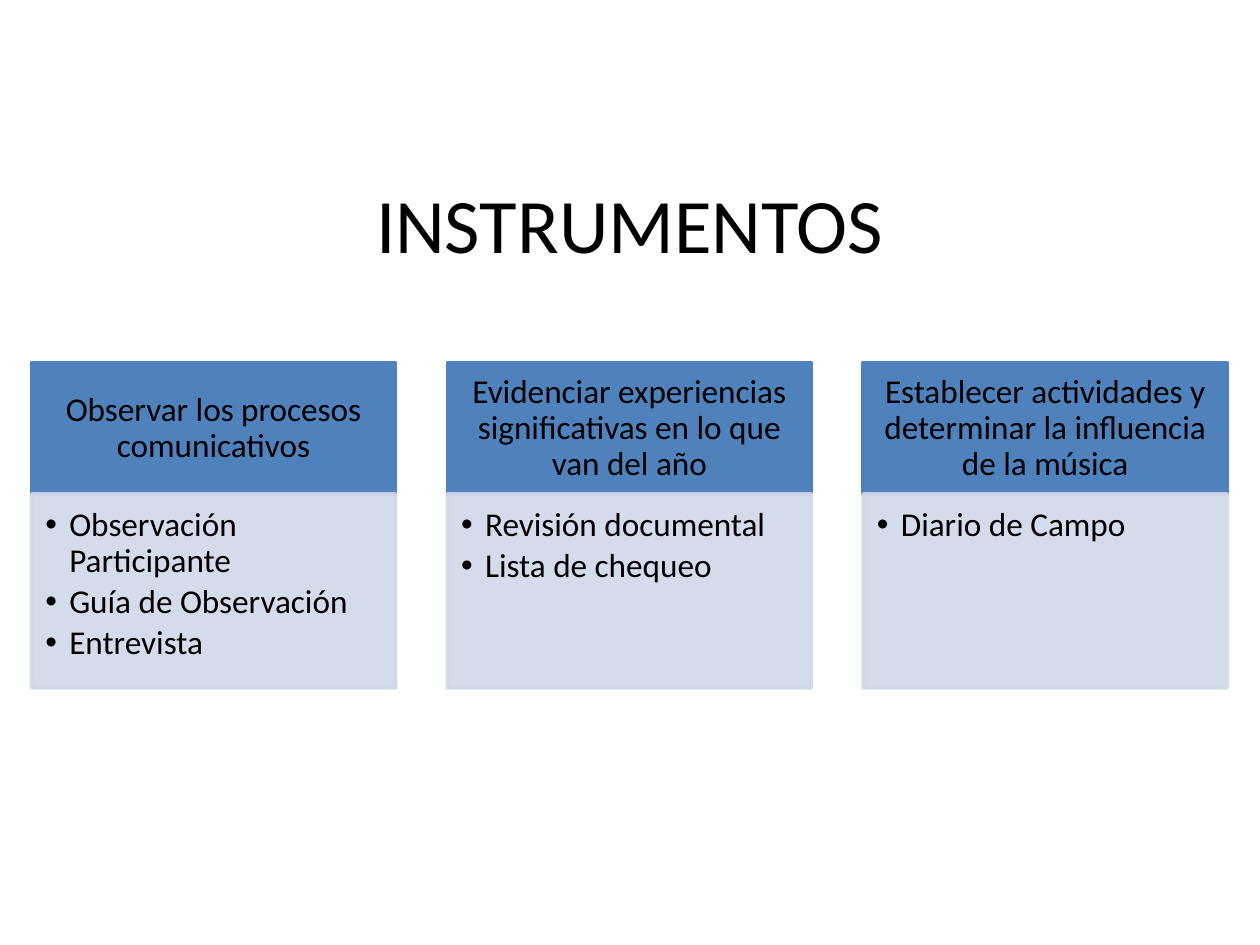
from lxml.etree import SubElement
from pptx import Presentation
from pptx.dml.color import RGBColor
from pptx.enum.shapes import MSO_SHAPE
from pptx.enum.text import MSO_ANCHOR, PP_ALIGN
from pptx.oxml.ns import qn
from pptx.util import Inches, Pt

BLUE, PALE, BLACK = "4F81BD", "D0D8E8", "000000"
LEFT, STEP, WIDTH = 0.25, 3.3, 2.89
TOP, HEAD, BODY = 2.88, 1.04, 1.54
GROUPS = [
    ("Observar los procesos comunicativos",
     ["Observación Participante", "Guía de Observación", "Entrevista"]),
    ("Evidenciar experiencias significativas en lo que van del año",
     ["Revisión documental", "Lista de chequeo"]),
    ("Establecer actividades y determinar la influencia de la música",
     ["Diario de Campo"]),
]


def paint(color, code):
    color.rgb = RGBColor.from_string(code)


def style(par, size):
    for run in par.runs:
        run.font.name = "Calibri"
        run.font.size = Pt(size)
        paint(run.font.color, BLACK)


def add_title(slide, text):
    title = slide.shapes.title
    title.left, title.top = Inches(0.5), Inches(1.14)
    title.width, title.height = Inches(9), Inches(1.25)
    frame = title.text_frame
    frame.text = text
    frame.vertical_anchor = MSO_ANCHOR.MIDDLE
    frame.paragraphs[0].alignment = PP_ALIGN.CENTER
    style(frame.paragraphs[0], 44)


def add_box(slide, x, y, high, code, insets):
    box = slide.shapes.add_shape(MSO_SHAPE.RECTANGLE, Inches(x), Inches(y),
                                 Inches(WIDTH), Inches(high))
    box.shadow.inherit = False
    box.fill.solid()
    paint(box.fill.fore_color, code)
    paint(box.line.color, code)
    box.line.width = Pt(2)
    frame = box.text_frame
    frame.word_wrap = True
    (frame.margin_left, frame.margin_top,
     frame.margin_right, frame.margin_bottom) = map(Inches, insets)
    return box


def fade(box, share):
    # Fill and outline take the same opacity
    for color in box._element.spPr.iter(qn("a:srgbClr")):
        SubElement(color, qn("a:alpha"), val=str(share * 1000))


def add_bullet(par):
    props = par._p.get_or_add_pPr()
    props.set("marL", str(Inches(0.19)))
    props.set("indent", str(-Inches(0.19)))
    SubElement(props, qn("a:buFont"), typeface="Arial")
    SubElement(props, qn("a:buChar"), char="•")


def add_head(slide, x, text):
    box = add_box(slide, x, TOP, HEAD, BLUE, (0.15, 0.08, 0.15, 0.08))
    frame = box.text_frame
    frame.text = text
    frame.vertical_anchor = MSO_ANCHOR.MIDDLE
    par = frame.paragraphs[0]
    par.alignment = PP_ALIGN.CENTER
    par.line_spacing = 0.9
    style(par, 19)


def add_list(slide, x, items):
    box = add_box(slide, x, TOP + HEAD, BODY, PALE, (0.11, 0.11, 0.15, 0.17))
    fade(box, 90)
    frame = box.text_frame
    frame.text = "\n".join(items)
    frame.vertical_anchor = MSO_ANCHOR.TOP
    for par in frame.paragraphs:
        add_bullet(par)
        par.level = 1
        par.alignment = PP_ALIGN.LEFT
        par.line_spacing = 0.9
        par.space_after = Pt(3)
        style(par, 19)


def main():
    deck = Presentation()
    deck.slide_width, deck.slide_height = Inches(10), Inches(7.5)
    slide = deck.slides.add_slide(deck.slide_layouts[5])
    add_title(slide, "INSTRUMENTOS")
    # One column per goal: heading above its instruments
    for col, (goal, items) in enumerate(GROUPS):
        x = LEFT + col * STEP
        add_head(slide, x, goal)
        add_list(slide, x, items)
    deck.save("out.pptx")


if __name__ == "__main__":
    main()
